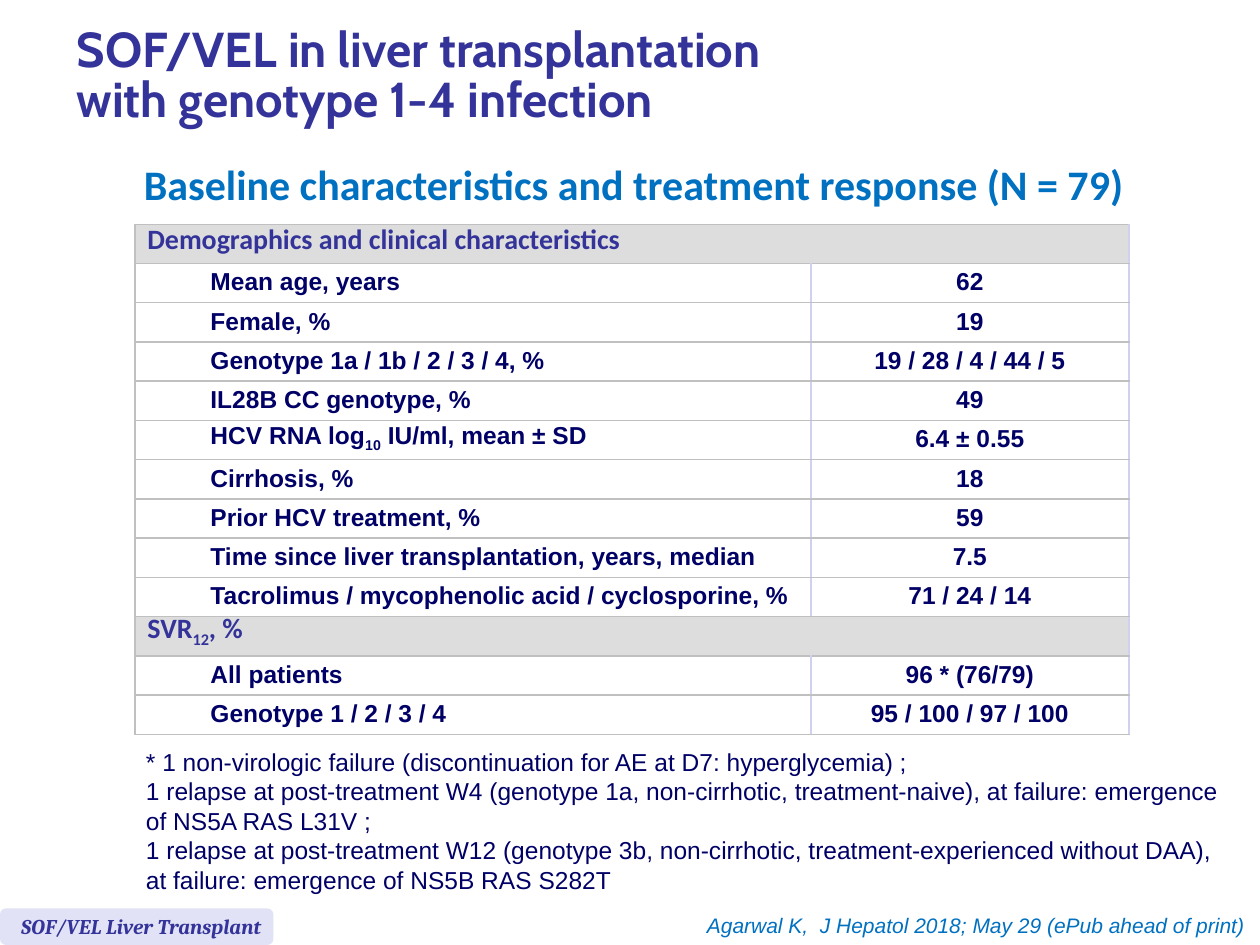
from lxml.etree import SubElement
from pptx import Presentation
from pptx.dml.color import RGBColor
from pptx.enum.shapes import MSO_SHAPE
from pptx.enum.text import MSO_ANCHOR, PP_ALIGN
from pptx.oxml.ns import qn
from pptx.util import Inches, Pt

COLORS = {
    "indigo": "333399", "navy": "000066", "blue": "0070C0", "white": "FFFFFF",
    "band": "DDDDDD", "gray_line": "C0C0C0", "lilac_line": "D0D0F0", "badge": "E2E2F6",
}
WIDTH, HEIGHT = Inches(10), Inches(7.5)
COLUMN, ROW = WIDTH / 100, HEIGHT / 100
VALUE_SHARE = 0.32

SECTIONS = {
    "Demographics and clinical characteristics": [
        ("Mean age, years", "62"),
        ("Female, %", "19"),
        ("Genotype 1a / 1b / 2 / 3 / 4, %", "19 / 28 / 4 / 44 / 5"),
        ("IL28B CC genotype, %", "49"),
        ("HCV RNA log_10_ IU/ml, mean ± SD", "6.4 ± 0.55"),
        ("Cirrhosis, %", "18"),
        ("Prior HCV treatment, %", "59"),
        ("Time since liver transplantation, years, median", "7.5"),
        ("Tacrolimus / mycophenolic acid / cyclosporine, %", "71 / 24 / 14"),
    ],
    "SVR_12_, %": [
        ("All patients", "96 * (76/79)"),
        ("Genotype 1 / 2 / 3 / 4", "95 / 100 / 97 / 100"),
    ],
}
FOOTNOTES = [
    "* 1 non-virologic failure (discontinuation for AE at D7: hyperglycemia) ;",
    "1 relapse at post-treatment W4 (genotype 1a, non-cirrhotic, treatment-naive), "
    "at failure: emergence of NS5A RAS L31V ;",
    "1 relapse at post-treatment W12 (genotype 3b, non-cirrhotic, treatment-experienced "
    "without DAA), at failure: emergence of NS5B RAS S282T",
]


def color(name):
    """Return the palette colour of that name."""
    return RGBColor.from_string(COLORS[name])


def place(box):
    """Turn a box in hundredths of the slide into slide lengths."""
    left, top, width, height = box
    return int(left * COLUMN), int(top * ROW), int(width * COLUMN), int(height * ROW)


def write(para, text, size=14, font="Arial", ink="navy", bold=False, italic=False,
          align=PP_ALIGN.LEFT, spacing=None, indent=0):
    """Fill a paragraph; underscores enclose subscripts and newlines break lines."""
    para.alignment = align
    para.line_spacing = spacing
    if indent:
        para._p.get_or_add_pPr().set("marL", str(int(indent)))
    for line_number, line in enumerate(text.split("\n")):
        if line_number:
            para.add_line_break()
        for part_number, part in enumerate(line.split("_")):
            span = para.add_run()
            span.text = part
            span.font.size, span.font.name = Pt(size), font
            span.font.bold, span.font.italic = bold, italic
            span.font.color.rgb = color(ink)
            if part_number % 2:
                span._r.get_or_add_rPr().set("baseline", "-25000")


def add_text(page, box, *texts, anchor=MSO_ANCHOR.TOP, **style):
    """Add a wrapped text box with one paragraph for each text."""
    frame = page.shapes.add_textbox(*place(box)).text_frame
    frame.word_wrap = True
    frame.vertical_anchor = anchor
    for number, text in enumerate(texts):
        para = frame.add_paragraph() if number else frame.paragraphs[0]
        write(para, text, **style)


def style_cell(cell, fill, left_line):
    """Give a cell its borders, fill and anchor."""
    properties = cell._tc.get_or_add_tcPr()
    lines = {"L": left_line, "R": "lilac_line", "T": "gray_line", "B": "gray_line"}
    for side, name in lines.items():
        line = SubElement(properties, qn(f"a:ln{side}"), w=str(Pt(1)))
        solid = SubElement(line, qn("a:solidFill"))
        SubElement(solid, qn("a:srgbClr"), val=COLORS[name])
    cell.fill.solid()
    cell.fill.fore_color.rgb = color(fill)
    cell.vertical_anchor = MSO_ANCHOR.MIDDLE


def add_results(page, box):
    """Add the table of section bands and indented measures."""
    rows = []
    for heading, measures in SECTIONS.items():
        rows += [(heading, None), *measures]
    left, top, width, height = place(box)
    table = page.shapes.add_table(len(rows), 2, left, top, width, height).table
    table.first_row = table.horz_banding = False
    table.columns[1].width = int(width * VALUE_SHARE)
    table.columns[0].width = width - table.columns[1].width
    for number, (label, value) in enumerate(rows):
        table.rows[number].height = height // len(rows)
        label_cell, value_cell = table.cell(number, 0), table.cell(number, 1)
        fill = "band" if value is None else "white"
        style_cell(label_cell, fill, "gray_line")
        style_cell(value_cell, fill, "lilac_line")
        label_para = label_cell.text_frame.paragraphs[0]
        if value is None:
            label_cell.merge(value_cell)
            write(label_para, label, size=16, font="Calibri", ink="indigo",
                  bold=True, spacing=Pt(15))
        else:
            write(label_para, label, bold=True, spacing=Pt(15), indent=5 * COLUMN)
            write(value_cell.text_frame.paragraphs[0], value, bold=True,
                  align=PP_ALIGN.CENTER, spacing=Pt(15))


def add_heading(page, box):
    """Add the slide title."""
    add_text(page, box, "SOF/VEL in liver transplantation\nwith genotype 1-4 infection",
             anchor=MSO_ANCHOR.MIDDLE, size=28, font="Cabin", ink="indigo",
             bold=True, spacing=0.85)


def add_subtitle(page, box):
    """Add the line above the table."""
    add_text(page, box, "Baseline characteristics and treatment response (N = 79)",
             size=24, font="Calibri", ink="blue", bold=True,
             align=PP_ALIGN.CENTER, spacing=Pt(15.2))


def add_badge(page, box):
    """Add the study label on its rounded tab."""
    left, top, width, height = box
    tab = page.shapes.add_shape(MSO_SHAPE.ROUNDED_RECTANGLE, *place(box))
    tab.shadow.inherit = False
    tab.fill.solid()
    tab.fill.fore_color.rgb = color("badge")
    tab.line.fill.background()
    add_text(page, (left + 0.7, top - 0.1, width + 0.8, height), "SOF/VEL Liver Transplant",
             size=12, font="Cambria", ink="indigo", bold=True, italic=True)


def add_citation(page, box):
    """Add the reference at the lower right."""
    add_text(page, box, "Agarwal K,  J Hepatol 2018; May 29 (ePub ahead of print)",
             size=12, ink="blue", italic=True, align=PP_ALIGN.RIGHT)


def main():
    """Build the slide and save the deck."""
    deck = Presentation()
    deck.slide_width, deck.slide_height = WIDTH, HEIGHT
    page = deck.slides.add_slide(deck.slide_layouts[6])
    add_results(page, (10.7, 23.73, 78.9, 54))
    add_subtitle(page, (8.2, 18.67, 84.2, 4.67))
    add_text(page, (10.6, 78.4, 88.2, 17.07), *FOOTNOTES)
    add_citation(page, (44.5, 95.87, 55.3, 4))
    add_badge(page, (0, 96.13, 21.7, 3.87))
    add_heading(page, (5.1, 1.07, 94.9, 14.27))
    deck.save("out.pptx")


if __name__ == "__main__":
    main()
